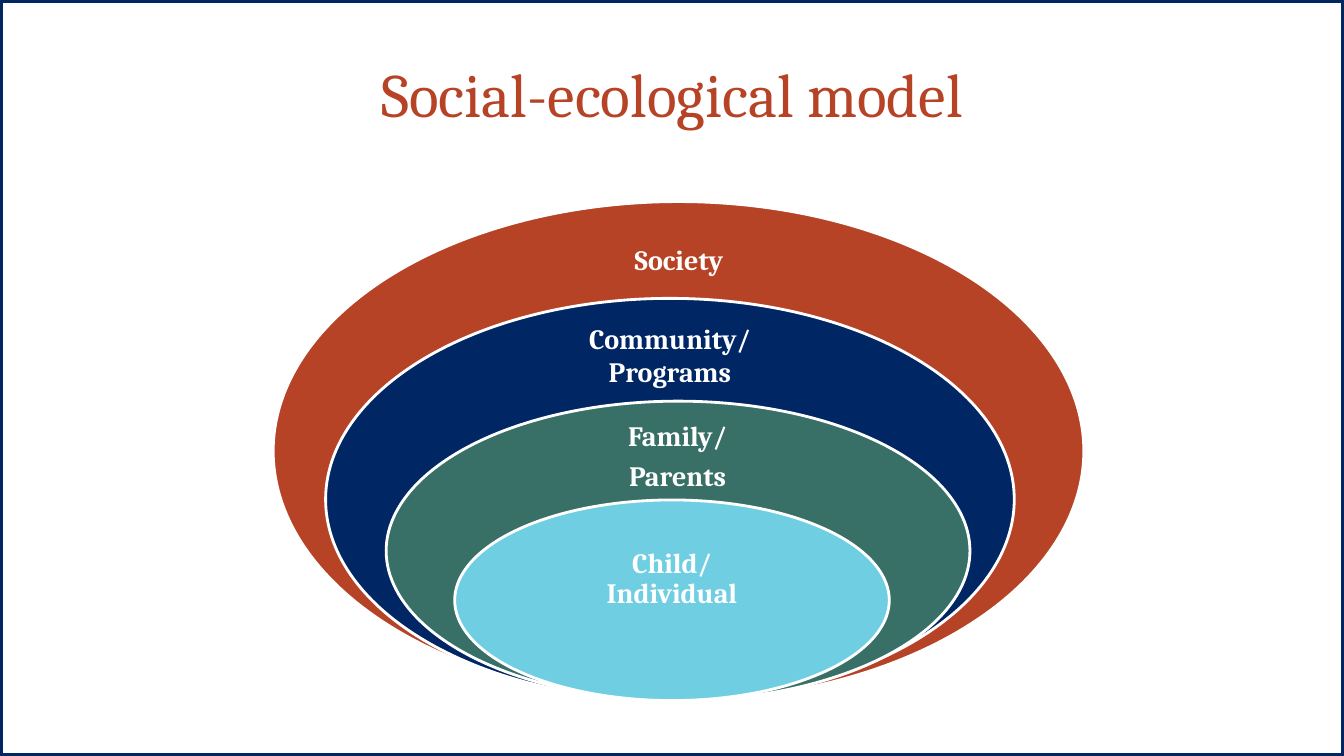
"""Build the social-ecological model slide with four nested ellipses."""
from pptx import Presentation
from pptx.dml.color import RGBColor
from pptx.enum.shapes import MSO_SHAPE as Shape
from pptx.enum.text import MSO_ANCHOR as Anchor, PP_ALIGN as Align
from pptx.util import Pt

PX = 9144
WIDTH, HEIGHT = 1333, 750
BOTTOM = 695
COLORS = {
    "white": "FFFFFF",
    "navy": "002663",
    "rust": "B64326",
    "green": "387067",
    "sky": "70CEE2",
}
LEVELS = [
    ("rust", (271, 200, 804), "Society", (561, 225, 225, 74), 0.6),
    ("navy", (323, 296, 683), "Community/\nPrograms", (545, 320, 239, 72), 0.7),
    ("green", (383, 398, 579), "Family/\nParents", (537, 420, 270, 67), 0.9),
    ("sky", (451, 496, 431), "Child/\vIndividual", (514, 525, 305, 99), 0.9),
]


class Painter:
    """Hold the style and the current slide."""

    def __init__(self, page, font):
        self.page = page
        self.font = font

    def color(self, name):
        return RGBColor.from_string(COLORS[name])

    def shape(self, kind, bounds, fill, line, weight):
        shape = self.page.shapes.add_shape(kind, *(n * PX for n in bounds))
        shape.shadow.inherit = False
        if fill:
            shape.fill.solid()
            shape.fill.fore_color.rgb = self.color(fill)
        else:
            shape.fill.background()
        shape.line.color.rgb = self.color(line)
        shape.line.width = Pt(weight)

    def text(self, words, bounds, size, color, bold=False, inset=10, spacing=1, after=0):
        box = self.page.shapes.add_textbox(*(n * PX for n in bounds))
        frame = box.text_frame
        frame.word_wrap = True
        frame.vertical_anchor = Anchor.MIDDLE
        frame.margin_left = frame.margin_right = inset * PX
        frame.margin_top = frame.margin_bottom = inset * PX
        frame.text = words
        for para in frame.paragraphs:
            para.alignment = Align.CENTER
            para.line_spacing = spacing
            para.space_after = Pt(after)
            for span in para.runs:
                span.font.name = self.font
                span.font.size = Pt(size)
                span.font.bold = bold
                span.font.color.rgb = self.color(color)


def main():
    deck = Presentation()
    deck.slide_width, deck.slide_height = WIDTH * PX, HEIGHT * PX
    page = deck.slides.add_slide(deck.slide_layouts[6])
    painter = Painter(page, "Cambria")
    painter.shape(Shape.RECTANGLE, (0, 0, WIDTH, HEIGHT), None, "navy", 4.5)
    painter.text("Social-ecological model", (67, 30, 1200, 125), 44, "rust")
    for fill, (left, top, width), label, bounds, spacing in LEVELS:
        painter.shape(Shape.OVAL, (left, top, width, BOTTOM - top), fill, "white", 2)
        painter.text(label, bounds, 20, "white", bold=True, inset=16,
                     spacing=spacing, after=7)
    deck.save("out.pptx")


if __name__ == "__main__":
    main()
